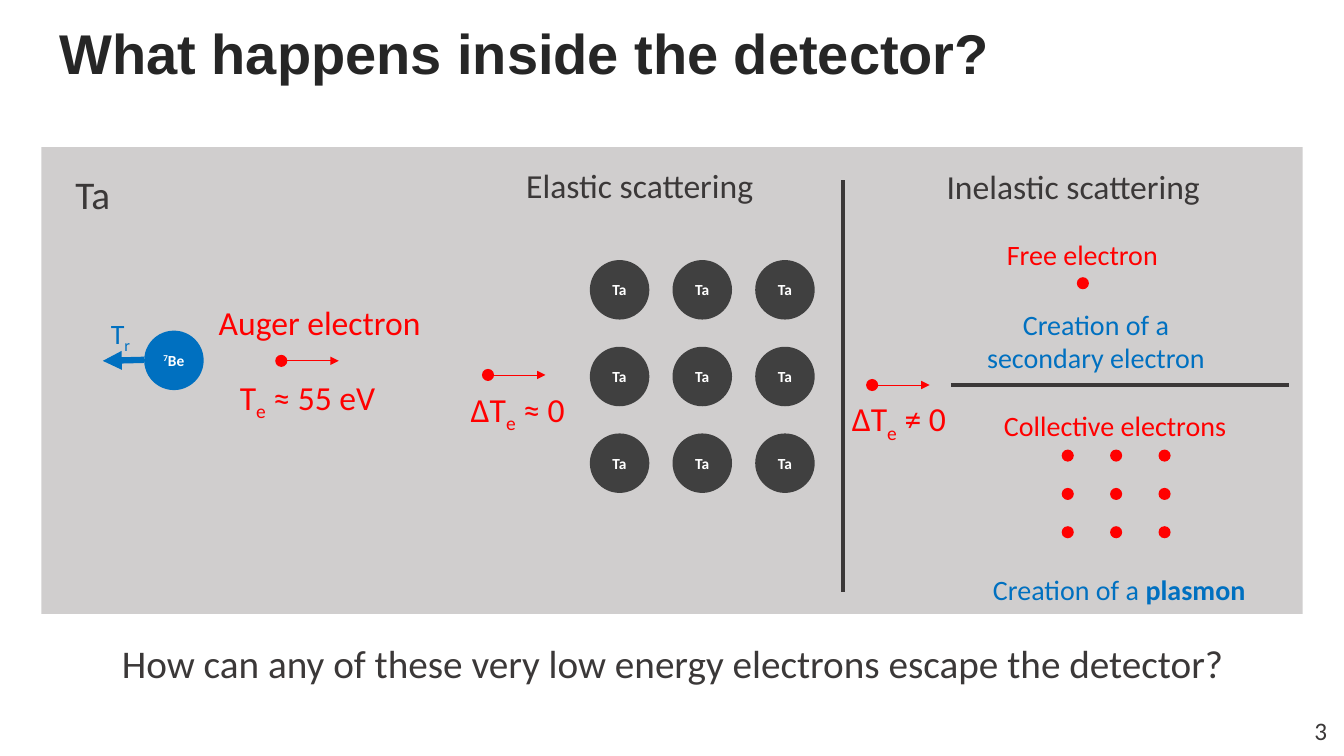
from itertools import product

from lxml.etree import SubElement
from pptx import Presentation
from pptx.dml.color import RGBColor
from pptx.enum.shapes import MSO_CONNECTOR, MSO_SHAPE
from pptx.enum.text import MSO_ANCHOR, MSO_AUTO_SIZE, PP_ALIGN
from pptx.oxml.ns import qn
from pptx.util import Pt

PX = 9144  # 100 px to the inch
RED, BLUE, DARK = "FF0000", "0070C0", "3B3838"
LEFT, MID, RIGHT = PP_ALIGN.LEFT, PP_ALIGN.CENTER, PP_ALIGN.RIGHT
SUB, SUPER, BOLD = {"baseline": "-25000"}, {"baseline": "30000"}, {"b": "1"}


def emu(*sizes):
    return [size * PX for size in sizes]


def rgb(color):
    return RGBColor.from_string(color)


def style(font, size, color, name="Calibri", bold=False):
    font.name, font.size, font.bold = name, Pt(size), bold
    font.color.rgb = rgb(color)


def write(frame, text, size, color, align=MID, mark=SUB, bold=False):
    """Fill a frame; parts between underscores get the mark's attributes."""
    para = frame.paragraphs[0]
    para.alignment = align
    for i, part in enumerate(text.split("_")):
        if part:
            run = para.add_run()
            run.text = part
            style(run.font, size, color, bold=bold)
            if i % 2:
                for key, value in mark.items():
                    run.font._element.set(key, value)


def label(slide, box, text, size, color, align=MID, mark=SUB, wrap=True):
    frame = slide.shapes.add_textbox(*emu(*box)).text_frame
    frame.word_wrap = wrap
    write(frame, text, size, color, align, mark)
    return frame


def solid(slide, kind, box, color):
    shape = slide.shapes.add_shape(kind, *emu(*box))
    shape.shadow.inherit = False
    shape.fill.solid()
    shape.fill.fore_color.rgb = rgb(color)
    shape.line.fill.background()
    return shape


def atom(slide, x, y, text, color):
    shape = solid(slide, MSO_SHAPE.OVAL, (x, y, 59, 59), color)
    frame = shape.text_frame
    frame.word_wrap = False
    frame.vertical_anchor = MSO_ANCHOR.MIDDLE
    write(frame, text, 11, "FFFFFF", mark=SUPER, bold=True)


def dot(slide, x, y):
    solid(slide, MSO_SHAPE.OVAL, (x, y, 12, 12), RED)


def line(slide, ends, color, width, arrow=False):
    link = slide.shapes.add_connector(MSO_CONNECTOR.STRAIGHT, *emu(*ends))
    link.line.color.rgb = rgb(color)
    link.line.width = Pt(width)
    if arrow:
        SubElement(link.line._get_or_add_ln(), qn("a:tailEnd"), type="triangle")
    SubElement(link._element.spPr, qn("a:effectLst"))


def moving(slide, x, y):
    """An electron with its arrow to the right."""
    dot(slide, x, y)
    line(slide, (x + 12, y + 6, x + 63, y + 6), RED, 0.5, True)


def head(slide, text):
    title = slide.shapes.title
    title.left, title.top, title.width, title.height = emu(0, -1, 1333, 113)
    frame = title.text_frame
    frame.text = text
    frame.word_wrap = True
    frame.auto_size = MSO_AUTO_SIZE.NONE
    frame.vertical_anchor = MSO_ANCHOR.MIDDLE
    frame.margin_left = 39 * PX
    para = frame.paragraphs[0]
    para.alignment, para.line_spacing = LEFT, 0.9
    para._p.get_or_add_pPr().set("indent", str(20 * PX))
    style(para.runs[0].font, 40, "262626", "Arial", True)


def decay(slide):
    label(slide, (65, 164, 126, 57), "Ta", 28, DARK, LEFT)
    label(slide, (205, 295, 224, 50), "Auger electron", 24, RED)
    atom(slide, 143, 328, "_7_Be", BLUE)
    line(slide, (143, 357, 102, 358), BLUE, 4.5, True)
    label(slide, (100, 309, 41, 44), "T_r_", 20, BLUE, LEFT, wrap=False)
    moving(slide, 273, 352)
    label(slide, (228, 369, 163, 50), "T_e_ ≈ 55 eV", 24, RED, LEFT)


def elastic(slide):
    label(slide, (496, 159, 277, 50), "Elastic scattering", 24, DARK)
    moving(slide, 478, 366)
    label(slide, (445, 381, 137, 50), "ΔT_e_ ≈ 0", 24, RED)
    for row, col in product(range(3), repeat=2):
        atom(slide, 585 + 82 * col, 258 + 86 * row, "Ta", "404040")


def inelastic(slide):
    label(slide, (926, 160, 277, 50), "Inelastic scattering", 24, DARK)
    moving(slide, 859, 376)
    label(slide, (834, 390, 115, 50), "ΔT_e_ ≠ 0", 24, RED)
    label(slide, (988, 231, 171, 44), "Free electron", 20, RED)
    dot(slide, 1068, 275)
    label(slide, (949, 300, 276, 77), "Creation of a secondary electron", 20, BLUE)
    line(slide, (943, 382, 1278, 382), DARK, 2.25)
    label(slide, (984, 400, 244, 44), "Collective electrons", 20, RED)
    for row, col in product(range(3), repeat=2):
        dot(slide, 1053 + 48 * col, 446 + 38 * row)
    label(slide, (975, 563, 271, 44), "Creation of a _plasmon_", 20, BLUE,
          LEFT, BOLD, wrap=False)


def main():
    deck = Presentation()
    deck.slide_width, deck.slide_height = emu(1333, 750)
    slide = deck.slides.add_slide(deck.slide_layouts[5])
    head(slide, "What happens inside the detector?")
    number = label(slide, (1252, 705, 74, 40), "3", 18, DARK, RIGHT)
    number.vertical_anchor = MSO_ANCHOR.MIDDLE
    solid(slide, MSO_SHAPE.RECTANGLE, (41, 146, 1251, 463), "D0CECE")
    decay(slide)
    elastic(slide)
    line(slide, (836, 179, 836, 587), DARK, 3)
    inelastic(slide)
    label(slide, (101, 629, 1132, 57),
          "How can any of these very low energy electrons escape the detector?",
          28, DARK)
    deck.save("out.pptx")


if __name__ == "__main__":
    main()
